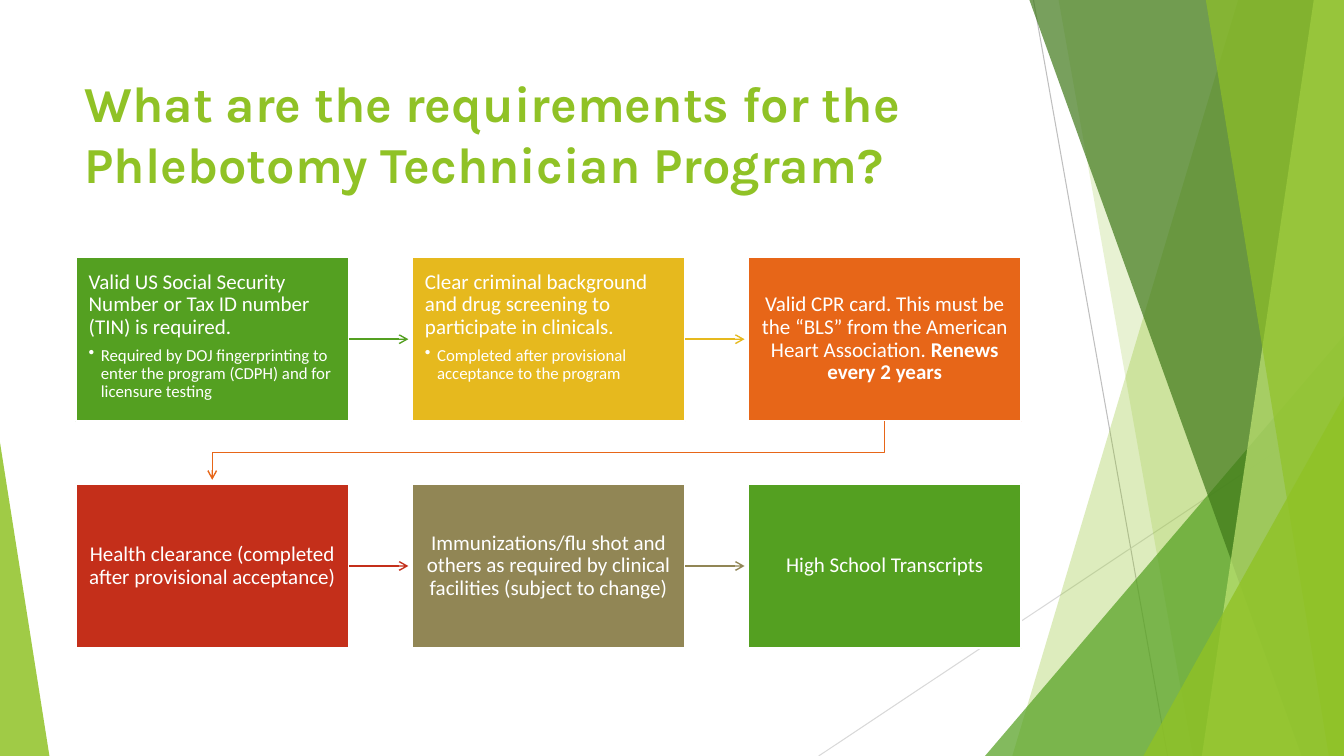
"""Build the Phlebotomy Technician Program requirements slide."""
from lxml.etree import SubElement
from pptx import Presentation
from pptx.dml.color import RGBColor as RGB
from pptx.enum.shapes import MSO_CONNECTOR as CONN, MSO_SHAPE as SHAPE
from pptx.enum.text import MSO_ANCHOR as ANCHOR, PP_ALIGN as ALIGN
from pptx.oxml.ns import qn
from pptx.util import Inches, Pt

THEME = {
    "lime": "90C226", "green": "54A021", "forest": "3F7819", "pale": "C0E474",
    "gold": "E6B91E", "orange": "E76618", "red": "C42F1A", "olive": "918655",
    "white": "FFFFFF", "gray": "BFBFBF", "light_gray": "D9D9D9",
    "title_font": "Karla", "body_font": "Calibri",
    "title_size": 36, "body_size": 15, "bullet_size": 12,
}
WIDTH, HEIGHT = 13.33, 7.5


def style_line(shape, color, width, arrow=False):
    shape.line.color.rgb = RGB.from_string(THEME[color])
    shape.line.width = Pt(width)
    spPr = shape._element.spPr
    if arrow:
        SubElement(spPr.find(qn("a:ln")), qn("a:tailEnd"), type="arrow")
    SubElement(spPr, qn("a:effectLst"))


def style_run(r, font, size, color, bold=False):
    r.font.name = THEME[font]
    r.font.size = Pt(THEME[size])
    r.font.color.rgb = RGB.from_string(THEME[color])
    r.font.bold = bold


prs = Presentation()
prs.slide_width, prs.slide_height = Inches(WIDTH), Inches(HEIGHT)
s = prs.slides.add_slide(prs.slide_layouts[6])

for x1, y1, x2, y2, color in [
    (10.25, 0, 11.58, HEIGHT, "gray"),
    (WIDTH, 4.03, 8.12, HEIGHT, "light_gray"),
]:
    line = s.shapes.add_connector(CONN.STRAIGHT, Inches(x1), Inches(y1), Inches(x2), Inches(y2))
    style_line(line, color, 0.75)

facets = [
    ("band", (12.28, 10.04), "lime", 30),
    ("band", (10.5, 11.83), "lime", 20),
    ("triangle", (9.77, 3.33, 3.56, 1), "green", 72),
    ("band", (10.21, 12.91), "forest", 70),
    ("band", (13.03, 11.92), "pale", 70),
    ("band", (11.96, 13.18), "lime", 65),
    ("triangle", (11.34, 3.93, 1.99, 1), "lime", 80),
    ("triangle", (0, 4.39, 0.49, 0), "lime", 85),
]
for kind, place, color, opacity in facets:
    if kind == "band":
        top_x, bottom_x = place
        fb = s.shapes.build_freeform(Inches(top_x), Inches(0))
        corners = [(WIDTH, 0), (WIDTH, HEIGHT), (bottom_x, HEIGHT)]
        fb.add_line_segments([(Inches(x), Inches(y)) for x, y in corners], close=True)
        facet = fb.convert_to_shape()
    else:
        x, y, w, apex = place
        facet = s.shapes.add_shape(
            SHAPE.ISOSCELES_TRIANGLE, Inches(x), Inches(y), Inches(w), Inches(HEIGHT - y))
        facet.adjustments[0] = apex
    facet.fill.solid()
    facet.fill.fore_color.rgb = RGB.from_string(THEME[color])
    facet.line.fill.background()
    facet.shadow.inherit = False
    fill_color = facet._element.spPr.find(".//" + qn("a:srgbClr"))
    SubElement(fill_color, qn("a:alpha"), val=str(opacity * 1000))

title = s.shapes.add_textbox(Inches(0.74), Inches(0.67), Inches(9.4), Inches(1.44))
tf = title.text_frame
tf.word_wrap = True
tf.text = "What are the requirements for the Phlebotomy Technician Program?"
style_run(tf.paragraphs[0].runs[0], "title_font", "title_size", "lime", True)

LEFT, TOP, BOX_W, BOX_H = 0.75, 2.55, 2.71, 1.63
STEP_X, STEP_Y, COLUMNS = 3.335, 2.25, 3
ARROW_LENGTH = 0.59
requirements = [
    ("green", "Valid US Social Security Number or Tax ID number (TIN) is required.", "",
     "Required by DOJ fingerprinting to enter the program (CDPH) and for licensure testing"),
    ("gold", "Clear criminal background and drug screening to participate in clinicals.", "",
     "Completed after provisional acceptance to the program"),
    ("orange", "Valid CPR card. This must be the “BLS” from the American Heart Association. ",
     "Renews every 2 years", ""),
    ("red", "Health clearance (completed after provisional acceptance)", "", ""),
    ("olive", "Immunizations/flu shot and others as required by clinical facilities "
     "(subject to change)", "", ""),
    ("green", "High School Transcripts", "", ""),
]
for i, (color, text, bold_text, bullet) in enumerate(requirements):
    row, col = divmod(i, COLUMNS)
    x, y = LEFT + col * STEP_X, TOP + row * STEP_Y
    box = s.shapes.add_shape(SHAPE.RECTANGLE, Inches(x), Inches(y), Inches(BOX_W), Inches(BOX_H))
    box.fill.solid()
    box.fill.fore_color.rgb = RGB.from_string(THEME[color])
    style_line(box, "white", 1.5)

    tf = box.text_frame
    tf.word_wrap = True
    tf.margin_left = tf.margin_right = Inches(0.13)
    tf.margin_top = tf.margin_bottom = Inches(0.14)
    tf.vertical_anchor = ANCHOR.TOP if bullet else ANCHOR.MIDDLE
    tf.text = text
    p = tf.paragraphs[0]
    p.alignment = ALIGN.LEFT if bullet else ALIGN.CENTER
    p.line_spacing = 0.9
    style_run(p.runs[0], "body_font", "body_size", "white")
    if bold_text:
        r = p.add_run()
        r.text = bold_text
        style_run(r, "body_font", "body_size", "white", True)
    if bullet:
        p.space_after = Pt(5.25)
        p = tf.add_paragraph()
        p.text = bullet
        p.level = 1
        p.alignment = ALIGN.LEFT
        p.line_spacing = 0.9
        pPr = p._p.get_or_add_pPr()
        pPr.set("marL", str(Inches(0.12)))
        pPr.set("indent", str(Inches(-0.12)))
        SubElement(pPr, qn("a:buChar"), char="•")
        style_run(p.runs[0], "body_font", "bullet_size", "white")

    if col < COLUMNS - 1:
        start_x, mid_y = x + BOX_W, y + BOX_H / 2
        arrow = s.shapes.add_connector(
            CONN.STRAIGHT, Inches(start_x), Inches(mid_y),
            Inches(start_x + ARROW_LENGTH), Inches(mid_y))
        arrow.begin_connect(box, 3)
        style_line(arrow, color, 1, arrow=True)

first_x = LEFT + BOX_W / 2
last_x = first_x + (COLUMNS - 1) * STEP_X
turn_y = 4.49
fb = s.shapes.build_freeform(Inches(last_x), Inches(TOP + BOX_H))
bends = [(last_x, turn_y), (first_x, turn_y), (first_x, 4.76)]
fb.add_line_segments([(Inches(x), Inches(y)) for x, y in bends], close=False)
row_arrow = fb.convert_to_shape()
row_arrow.fill.background()
style_line(row_arrow, "orange", 1, arrow=True)

prs.save("out.pptx")
